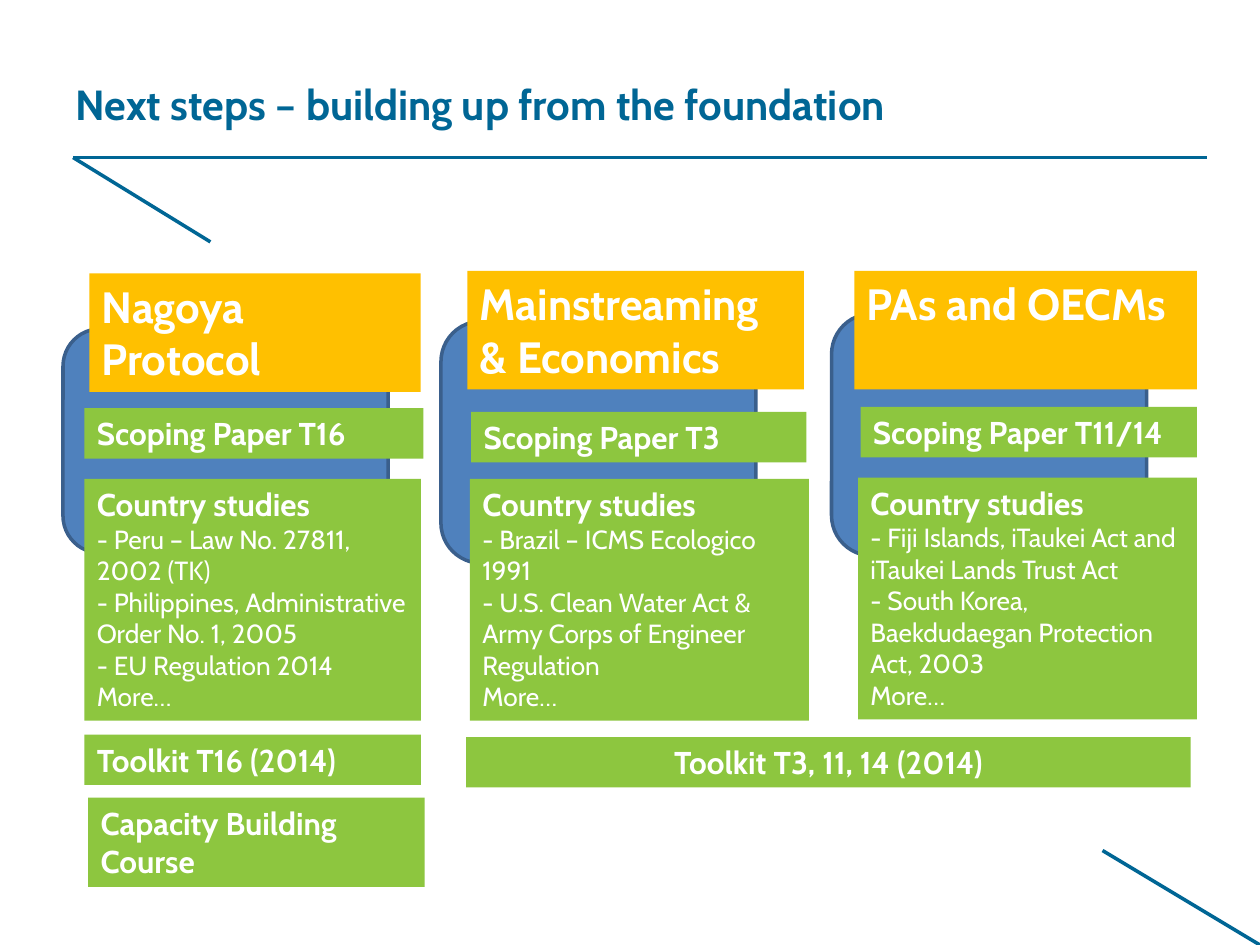
"""Build the slide on next steps, with three columns of work and their toolkits."""
from lxml.etree import SubElement
from pptx import Presentation
from pptx.dml.color import RGBColor
from pptx.enum.shapes import MSO_CONNECTOR, MSO_SHAPE
from pptx.enum.text import MSO_ANCHOR, PP_ALIGN
from pptx.oxml.ns import qn
from pptx.util import Inches, Pt

FONT = "Cabin"
TEAL, BLUE, BLUE_EDGE = "006695", "4F81BD", "3A5F8C"
AMBER, GREEN, WHITE = "FFC000", "8DC63F", "FFFFFF"

TITLE = "Next steps – building up from the foundation"
RULES = [
    (8.75, 6.75, 10, 7.5),
    (0.58, 1.25, 9.58, 1.25),
    (0.58, 1.25, 1.67, 1.92),
]
COLUMNS = [
    {
        "backdrop": (0.5, 2.61, 2.58, 1.78),
        "theme": ("Nagoya Protocol", (0.71, 2.17, 2.63, 0.94)),
        "paper": ("Scoping Paper T16", (0.67, 3.24, 2.69, 0.4)),
        "studies": ([
            "- Peru – Law No. 27811, 2002 (TK)",
            "- Philippines, Administrative Order No. 1, 2005",
            "- EU Regulation 2014",
        ], (0.67, 3.8, 2.67, 1.92)),
    },
    {
        "backdrop": (3.5, 2.55, 2.5, 1.92),
        "theme": ("Mainstreaming & Economics", (3.71, 2.15, 2.67, 0.94)),
        "paper": ("Scoping Paper T3", (3.74, 3.27, 2.66, 0.4)),
        "studies": ([
            "- Brazil – ICMS Ecologico 1991",
            "- U.S. Clean Water Act & Army Corps of Engineer Regulation",
        ], (3.73, 3.8, 2.69, 1.92)),
    },
    {
        "backdrop": (6.6, 2.49, 2.5, 1.92),
        "theme": ("PAs and OECMs", (6.78, 2.15, 2.72, 0.94)),
        "paper": ("Scoping Paper T11/14", (6.83, 3.23, 2.67, 0.4)),
        "studies": ([
            "- Fiji Islands, iTaukei Act and iTaukei Lands Trust Act",
            "- South Korea, Baekdudaegan Protection Act, 2003",
        ], (6.81, 3.79, 2.69, 1.92)),
    },
]
OUTPUTS = [
    ("Toolkit T16 (2014)", (0.67, 5.83, 2.67, 0.4), PP_ALIGN.LEFT),
    ("Toolkit T3, 11, 14 (2014)", (3.7, 5.85, 5.75, 0.4), PP_ALIGN.CENTER),
    ("Capacity Building Course", (0.7, 6.33, 2.67, 0.71), PP_ALIGN.LEFT),
]


def rgb(value):
    return RGBColor.from_string(value)


def add_text(paragraph, text, size, color=WHITE, bold=True, align=PP_ALIGN.LEFT):
    paragraph.alignment = align
    run = paragraph.add_run()
    run.text = text
    run.font.name = FONT
    run.font.size = Pt(size)
    run.font.bold = bold
    run.font.color.rgb = rgb(color)


def add_block(slide, box, fill, kind=MSO_SHAPE.RECTANGLE, edge=None):
    block = slide.shapes.add_shape(kind, *map(Inches, box))
    block.shadow.inherit = False
    block.fill.solid()
    block.fill.fore_color.rgb = rgb(fill)
    if edge:
        block.line.color.rgb = rgb(edge)
        block.line.width = Pt(2)
    else:
        block.line.fill.background()
    return block


def add_label(slide, box, fill, lines, align=PP_ALIGN.LEFT):
    frame = add_block(slide, box, fill).text_frame
    frame.word_wrap = True
    frame.vertical_anchor = MSO_ANCHOR.TOP
    for index, (text, size, bold) in enumerate(lines):
        paragraph = frame.add_paragraph() if index else frame.paragraphs[0]
        add_text(paragraph, text, size, bold=bold, align=align)


def add_rule(slide, ends):
    rule = slide.shapes.add_connector(MSO_CONNECTOR.STRAIGHT, *map(Inches, ends))
    rule.line.color.rgb = rgb(TEAL)
    rule.line.width = Pt(2)
    SubElement(rule._element.spPr, qn("a:effectLst"))


def add_title(slide):
    title = slide.shapes.title
    title.left, title.top, title.width, title.height = map(Inches, (0.5, 0.32, 9, 1))
    title.text_frame.word_wrap = True
    title.text_frame.vertical_anchor = MSO_ANCHOR.MIDDLE
    add_text(title.text_frame.paragraphs[0], TITLE, 24, TEAL)


def add_column(slide, column):
    theme, theme_box = column["theme"]
    paper, paper_box = column["paper"]
    studies, studies_box = column["studies"]
    study_lines = [(study, 15, False) for study in studies + ["More…"]]
    add_block(slide, column["backdrop"], BLUE, MSO_SHAPE.ROUNDED_RECTANGLE, BLUE_EDGE)
    add_label(slide, theme_box, AMBER, [(theme, 25, True)])
    add_label(slide, studies_box, GREEN, [("Country studies", 18, True)] + study_lines)
    add_label(slide, paper_box, GREEN, [(paper, 18, True)])


def main():
    deck = Presentation()
    deck.slide_width, deck.slide_height = Inches(10), Inches(7.5)
    slide = deck.slides.add_slide(deck.slide_layouts[5])
    add_title(slide)
    for ends in RULES:
        add_rule(slide, ends)
    for column in COLUMNS:
        add_column(slide, column)
    for output, box, align in OUTPUTS:
        add_label(slide, box, GREEN, [(output, 18, True)], align)
    deck.save("out.pptx")


if __name__ == "__main__":
    main()
